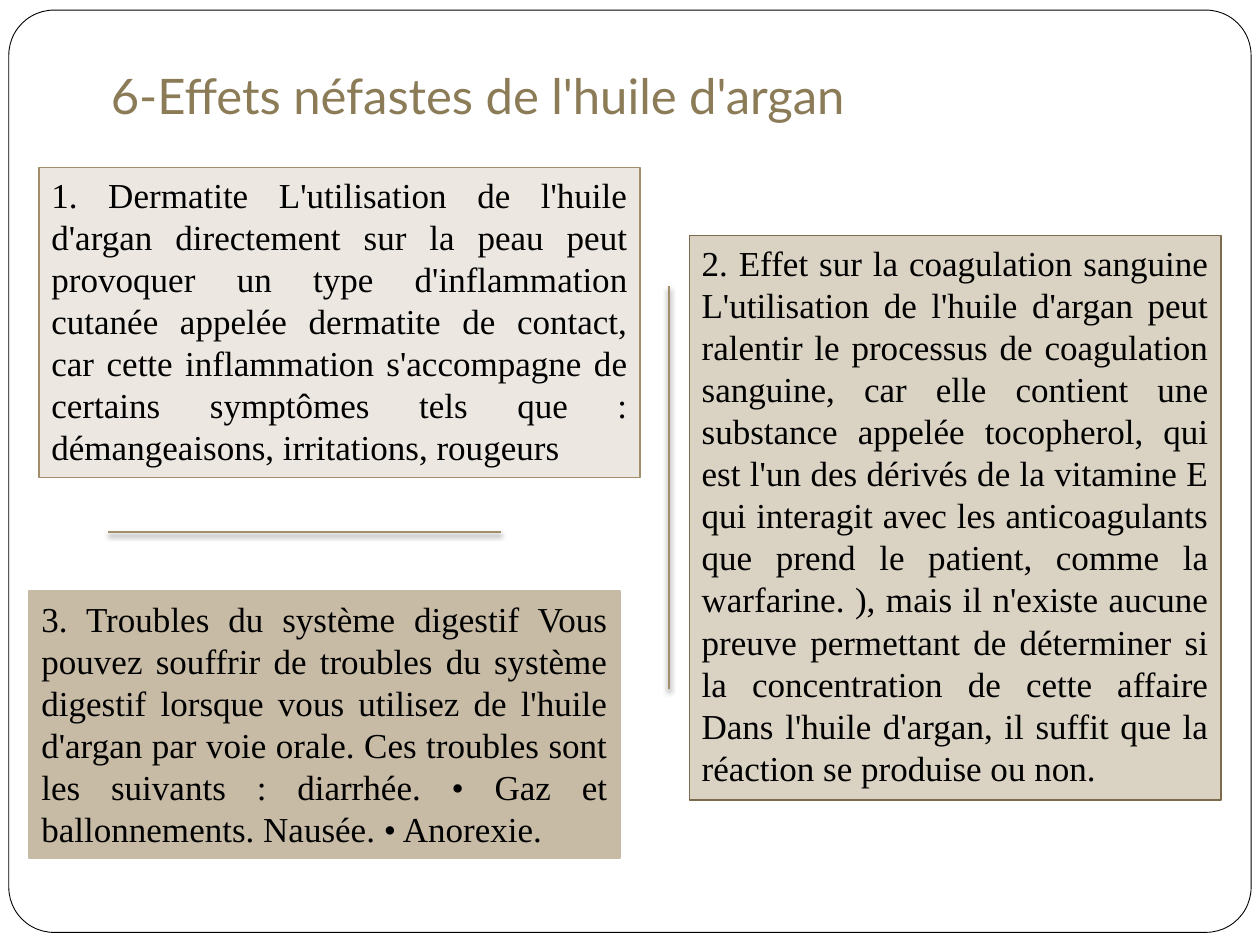
from dataclasses import dataclass

from lxml.etree import SubElement
from pptx import Presentation
from pptx.dml.color import RGBColor
from pptx.enum.shapes import MSO_CONNECTOR, MSO_SHAPE
from pptx.enum.text import MSO_ANCHOR, PP_ALIGN
from pptx.oxml import parse_xml
from pptx.oxml.ns import nsdecls, qn
from pptx.util import Inches, Pt


@dataclass(frozen=True)
class Theme:
    title_font: str = "Lato"
    body_font: str = "Times New Roman"
    title_size: float = 28
    body_size: float = 20
    body_leading: float = 24
    border_width: float = 0.75
    frame_width: float = 0.5
    divider_width: float = 1
    white: str = "FFFFFF"
    black: str = "000000"
    title: str = "8B7B57"
    tan: str = "A28E6A"
    brown: str = "7C6B4D"
    light: str = "ECE8E1"
    medium: str = "DAD2C3"
    dark: str = "C7BBA6"


THEME = Theme()

TITLE = "6-Effets néfastes de l'huile d'argan"
DERMATITIS = (
    "1. Dermatite L'utilisation de l'huile d'argan directement sur la peau peut "
    "provoquer un type d'inflammation cutanée appelée dermatite de contact, car "
    "cette inflammation s'accompagne de certains symptômes tels que : "
    "démangeaisons, irritations, rougeurs"
)
COAGULATION = (
    "2. Effet sur la coagulation sanguine L'utilisation de l'huile d'argan peut "
    "ralentir le processus de coagulation sanguine, car elle contient une "
    "substance appelée tocopherol, qui est l'un des dérivés de la vitamine E qui "
    "interagit avec les anticoagulants que prend le patient, comme la warfarine. ), "
    "mais il n'existe aucune preuve permettant de déterminer si la concentration "
    "de cette affaire Dans l'huile d'argan, il suffit que la réaction se produise "
    "ou non."
)
DIGESTION = (
    "3. Troubles du système digestif Vous pouvez souffrir de troubles du système "
    "digestif lorsque vous utilisez de l'huile d'argan par voie orale. Ces troubles "
    "sont les suivants : diarrhée. • Gaz et ballonnements. Nausée. • Anorexie."
)

# Box (left, top, width, height), text, fill, border
EFFECTS = [
    ((0.31, 1.33, 4.77, 2.46), DERMATITIS, THEME.light, THEME.tan),
    ((5.47, 1.87, 4.22, 4.48), COAGULATION, THEME.medium, THEME.brown),
    ((0.23, 4.69, 4.69, 2.12), DIGESTION, THEME.dark, THEME.dark),
]
DIVIDERS = [((5.31, 2.27), (5.31, 5.47)), ((0.86, 4.22), (3.98, 4.22))]


def color(value):
    return RGBColor.from_string(value)


def write_text(shape, text, font, size, text_color, alignment):
    frame = shape.text_frame
    frame.word_wrap = True
    frame.vertical_anchor = MSO_ANCHOR.TOP
    paragraph = frame.paragraphs[0]
    paragraph.alignment = alignment
    run = paragraph.add_run()
    run.text = text
    run.font.name = font
    run.font.size = Pt(size)
    run.font.color.rgb = color(text_color)
    return paragraph


def add_panel(slide, kind, box, fill, border, width):
    shape = slide.shapes.add_shape(kind, *map(Inches, box))
    shape.shadow.inherit = False
    shape.fill.solid()
    shape.fill.fore_color.rgb = color(fill)
    shape.line.color.rgb = color(border)
    shape.line.width = Pt(width)
    return shape


def place_title(slide, box):
    title = slide.shapes.title
    title.left, title.top, title.width, title.height = map(Inches, box)
    write_text(title, TITLE, THEME.title_font, THEME.title_size, THEME.title, PP_ALIGN.LEFT)


def add_frame(slide, box):
    """Draw the rounded page border behind the title."""
    frame = add_panel(slide, MSO_SHAPE.ROUNDED_RECTANGLE, box,
                      THEME.white, THEME.black, THEME.frame_width)
    frame.adjustments[0] = 0.049
    slide.shapes.title.element.addprevious(frame.element)


def add_effect(slide, box, text, fill, border):
    panel = add_panel(slide, MSO_SHAPE.RECTANGLE, box, fill, border, THEME.border_width)
    paragraph = write_text(panel, text, THEME.body_font, THEME.body_size,
                           THEME.black, PP_ALIGN.JUSTIFY)
    paragraph.line_spacing = Pt(THEME.body_leading)


def add_divider(slide, start, end):
    """Draw a line with a soft shadow below it."""
    line = slide.shapes.add_connector(
        MSO_CONNECTOR.STRAIGHT, *map(Inches, (*start, *end)))
    line.line.color.rgb = color(THEME.tan)
    line.line.width = Pt(THEME.divider_width)
    effects = parse_xml(f"<a:effectLst {nsdecls('a')}/>")
    shadow = SubElement(effects, qn("a:outerShdw"), blurRad=str(Pt(3)),
                        dist=str(Pt(2)), dir="5400000", rotWithShape="0")
    shade = SubElement(shadow, qn("a:srgbClr"), val=THEME.black)
    SubElement(shade, qn("a:alpha"), val="50000")
    line.element.spPr.append(effects)


def build_slide(presentation):
    slide = presentation.slides.add_slide(presentation.slide_layouts[5])
    place_title(slide, (0.78, 0.47, 8.05, 0.57))
    add_frame(slide, (0.07, 0.08, 9.86, 7.32))
    for effect in EFFECTS:
        add_effect(slide, *effect)
    for start, end in DIVIDERS:
        add_divider(slide, start, end)


def main():
    presentation = Presentation()
    presentation.slide_width = Inches(10)
    presentation.slide_height = Inches(7.5)
    build_slide(presentation)
    presentation.save("out.pptx")


if __name__ == "__main__":
    main()
